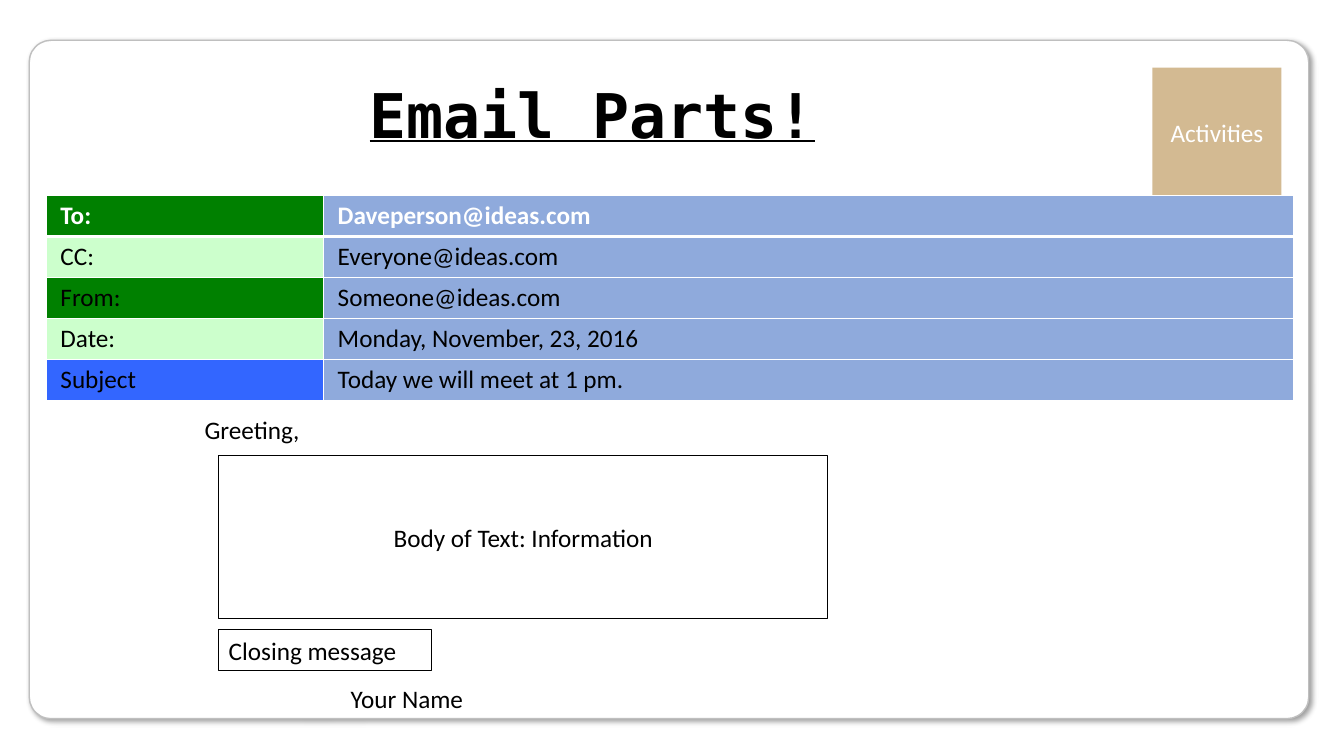
from lxml import etree
from pptx import Presentation
from pptx.dml.color import RGBColor
from pptx.enum.shapes import MSO_SHAPE
from pptx.enum.text import MSO_ANCHOR, PP_ALIGN
from pptx.oxml import parse_xml
from pptx.oxml.ns import nsdecls, qn
from pptx.util import Inches, Pt

# Content: table rows as (label, label fill, value)
EMAIL_ROWS = [
    ("To:", "008000", "Daveperson@ideas.com"),
    ("CC:", "CCFFCC", "Everyone@ideas.com"),
    ("From:", "008000", "Someone@ideas.com"),
    ("Date:", "CCFFCC", "Monday, November, 23, 2016"),
    ("Subject", "3366FF", "Today we will meet at 1 pm."),
]
VALUE_FILL = "8FAADC"
COLUMN_WIDTHS = (2.75, 9.62)
ROW_HEIGHT = 0.406

# Message parts: text, (left, top, width, height), outlined, alignment
MESSAGE_PARTS = [
    ("Greeting,", (1.93, 4.06, 2.51, 0.4), False, PP_ALIGN.LEFT),
    ("Body of Text: Information", (2.17, 4.52, 6.04, 1.62), True, PP_ALIGN.CENTER),
    ("Closing message", (2.17, 6.25, 2.11, 0.4), True, PP_ALIGN.LEFT),
    ("Your Name", (3.38, 6.73, 2.62, 0.4), False, PP_ALIGN.LEFT),
]


def color(hex_value):
    return RGBColor.from_string(hex_value)


def write(frame, text, align=PP_ALIGN.LEFT, hex_value="000000", size=18,
          font="Calibri", bold=False, underline=False):
    frame.word_wrap = True
    paragraph = frame.paragraphs[0]
    paragraph.alignment = align
    run = paragraph.add_run()
    run.text = text
    run.font.name = font
    run.font.size = Pt(size)
    run.font.bold = bold
    run.font.underline = underline
    run.font.color.rgb = color(hex_value)
    return paragraph


def add_box(preset, box, fill=None, line=None, line_width=0.75):
    shape = slide.shapes.add_shape(preset, *map(Inches, box))
    shape.shadow.inherit = False
    if fill:
        shape.fill.solid()
        shape.fill.fore_color.rgb = color(fill)
    else:
        shape.fill.background()
    if line:
        shape.line.color.rgb = color(line)
        shape.line.width = Pt(line_width)
    else:
        shape.line.fill.background()
    return shape


def add_shadow(shape):
    effects = shape._element.spPr.find(qn("a:effectLst"))
    effects.append(parse_xml(
        f'<a:outerShdw {nsdecls("a")} blurRad="{Pt(4)}" dist="{Pt(3)}" '
        'dir="2700000" algn="tl" rotWithShape="0"><a:srgbClr val="000000">'
        '<a:alpha val="40000"/></a:srgbClr></a:outerShdw>'))


def set_borders(cell, top, bottom):
    properties = cell._tc.get_or_add_tcPr()
    for side, width in (("L", 1), ("R", 1), ("T", top), ("B", bottom)):
        border = etree.SubElement(properties, qn(f"a:ln{side}"), w=str(Pt(width)))
        fill = etree.SubElement(border, qn("a:solidFill"))
        etree.SubElement(fill, qn("a:srgbClr"), val="FFFFFF")


presentation = Presentation()
presentation.slide_width = Inches(13.33)
presentation.slide_height = Inches(7.5)
slide = presentation.slides.add_slide(presentation.slide_layouts[6])

# Rounded panel and activities tag
panel = add_box(MSO_SHAPE.ROUNDED_RECTANGLE, (0.29, 0.4, 12.69, 6.73),
                "FFFFFF", "BFBFBF", 1)
panel.adjustments[0] = 0.032
add_shadow(panel)
tag = add_box(MSO_SHAPE.RECTANGLE, (11.43, 0.67, 1.28, 1.28), "D3BA92")
tag.text_frame.vertical_anchor = MSO_ANCHOR.MIDDLE
write(tag.text_frame, "Activities", PP_ALIGN.CENTER, "FFFFFF")

# Title
title = slide.shapes.add_textbox(*map(Inches, (0.46, 0.4, 10.83, 1.55)))
title.text_frame.vertical_anchor = MSO_ANCHOR.MIDDLE
title_paragraph = write(title.text_frame, "Email Parts!", PP_ALIGN.CENTER, size=44,
                        font="DejaVu Sans Mono", bold=True, underline=True)
title_paragraph.line_spacing = 0.9

# Email header table
table = slide.shapes.add_table(
    len(EMAIL_ROWS), len(COLUMN_WIDTHS), Inches(0.46), Inches(1.94),
    Inches(sum(COLUMN_WIDTHS)), Inches(ROW_HEIGHT * len(EMAIL_ROWS))).table
for column, width in zip(table.columns, COLUMN_WIDTHS):
    column.width = Inches(width)
for row_index, (label, label_fill, value) in enumerate(EMAIL_ROWS):
    table.rows[row_index].height = Inches(ROW_HEIGHT)
    is_header = row_index == 0
    for column_index, (text, fill) in enumerate(((label, label_fill), (value, VALUE_FILL))):
        cell = table.cell(row_index, column_index)
        set_borders(cell, 3 if row_index == 1 else 1, 3 if is_header else 1)
        cell.fill.solid()
        cell.fill.fore_color.rgb = color(fill)
        cell.margin_left = cell.margin_right = Inches(0.14)
        cell.margin_top = cell.margin_bottom = Inches(0.05)
        write(cell.text_frame, text, hex_value="FFFFFF" if is_header else "000000",
              bold=is_header)

# Message parts below the table
for text, box, outlined, align in MESSAGE_PARTS:
    if outlined:
        part = add_box(MSO_SHAPE.RECTANGLE, box, line="000000")
    else:
        part = slide.shapes.add_textbox(*map(Inches, box))
    part.text_frame.vertical_anchor = MSO_ANCHOR.MIDDLE
    write(part.text_frame, text, align)

presentation.save("out.pptx")
